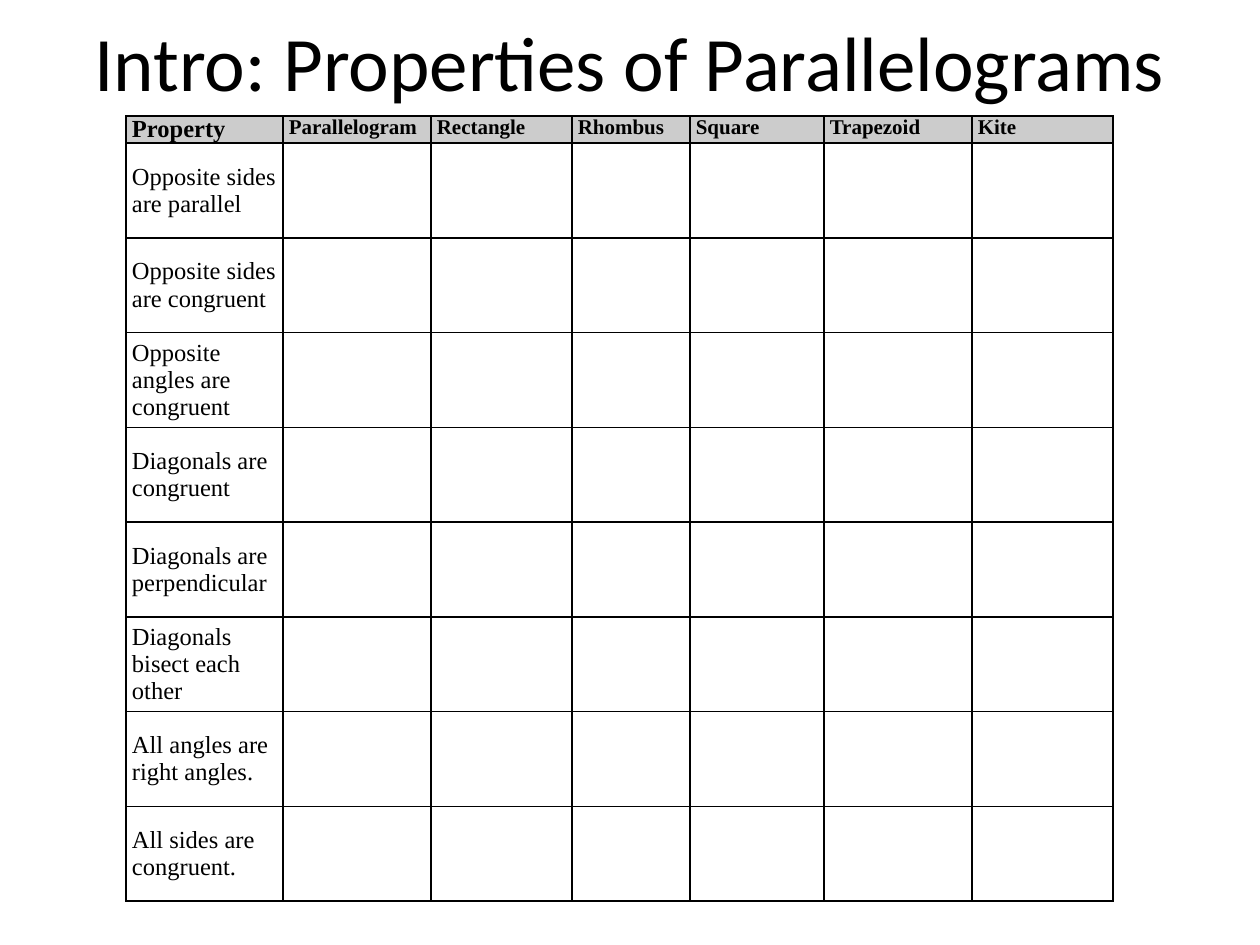
from lxml import etree
from pptx import Presentation
from pptx import util as u
from pptx.dml.color import RGBColor
from pptx.enum import text
from pptx.oxml import ns

BLACK = RGBColor(0x00, 0x00, 0x00)
HEADER_GRAY = RGBColor(0xCC, 0xCC, 0xCC)

FIGURES = ["Parallelogram", "Rectangle", "Rhombus", "Square", "Trapezoid", "Kite"]
PROPERTIES = [
    "Opposite sides are parallel",
    "Opposite sides are congruent",
    "Opposite angles are congruent",
    "Diagonals are congruent",
    "Diagonals are perpendicular",
    "Diagonals bisect each other",
    "All angles are right angles.",
    "All sides are congruent.",
]
COLUMN_WIDTHS = [157, 148, 141, 118, 134, 148, 141]
TABLE_LEFT, TABLE_TOP, HEADER_HEIGHT, BODY_HEIGHT = 126, 116, 26, 758


def px(n):
    return u.Emu(round(n * 914400 / 126))


def add_borders(cell):
    """Draw a 1 pt black line on all four sides of the cell."""
    properties = cell._tc.get_or_add_tcPr()
    for side in ("lnL", "lnR", "lnT", "lnB"):
        line = etree.SubElement(properties, ns.qn(f"a:{side}"), w=str(u.Pt(1)))
        fill = etree.SubElement(line, ns.qn("a:solidFill"))
        etree.SubElement(fill, ns.qn("a:srgbClr"), val=str(BLACK))


deck = Presentation()
deck.slide_width, deck.slide_height = px(1260), px(945)
slide = deck.slides.add_slide(deck.slide_layouts[5])

title = slide.shapes.title
title_box = {"left": px(63), "top": px(0), "width": px(1134), "height": px(122)}
for name, value in title_box.items():
    setattr(title, name, value)
title.text_frame.text = "Intro: Properties of Parallelograms"
title.text_frame.vertical_anchor = text.MSO_ANCHOR.MIDDLE
heading = title.text_frame.paragraphs[0]
heading.alignment = text.PP_ALIGN.CENTER
heading.font.color.rgb = BLACK
for name, value in {"name": "Calibri", "size": u.Pt(44)}.items():
    setattr(heading.font, name, value)

rows = [["Property"] + FIGURES]
rows += [[label] + [""] * len(FIGURES) for label in PROPERTIES]
checklist = slide.shapes.add_table(
    len(rows), len(COLUMN_WIDTHS), px(TABLE_LEFT), px(TABLE_TOP),
    px(sum(COLUMN_WIDTHS)), px(HEADER_HEIGHT + BODY_HEIGHT)).table
checklist.horz_banding = False

for column, width in zip(checklist.columns, COLUMN_WIDTHS):
    column.width = px(width)

cell_margins = {"margin_left": px(6), "margin_right": px(6),
                "margin_top": 0, "margin_bottom": 0}

for r, labels in enumerate(rows):
    is_header = r == 0
    checklist.rows[r].height = px(HEADER_HEIGHT if is_header else BODY_HEIGHT / len(PROPERTIES))
    for c, label in enumerate(labels):
        cell = checklist.cell(r, c)
        add_borders(cell)
        for name, value in cell_margins.items():
            setattr(cell, name, value)
        if is_header:
            cell.fill.solid()
            cell.fill.fore_color.rgb = HEADER_GRAY
        else:
            cell.fill.background()
            cell.vertical_anchor = text.MSO_ANCHOR.MIDDLE
        if label:
            cell.text = label
            font = cell.text_frame.paragraphs[0].runs[0].font
            font.color.rgb = BLACK
            label_format = {"name": "Times New Roman", "bold": is_header,
                            "size": u.Pt(14 if c == 0 else 12)}
            for name, value in label_format.items():
                setattr(font, name, value)

deck.save("out.pptx")
